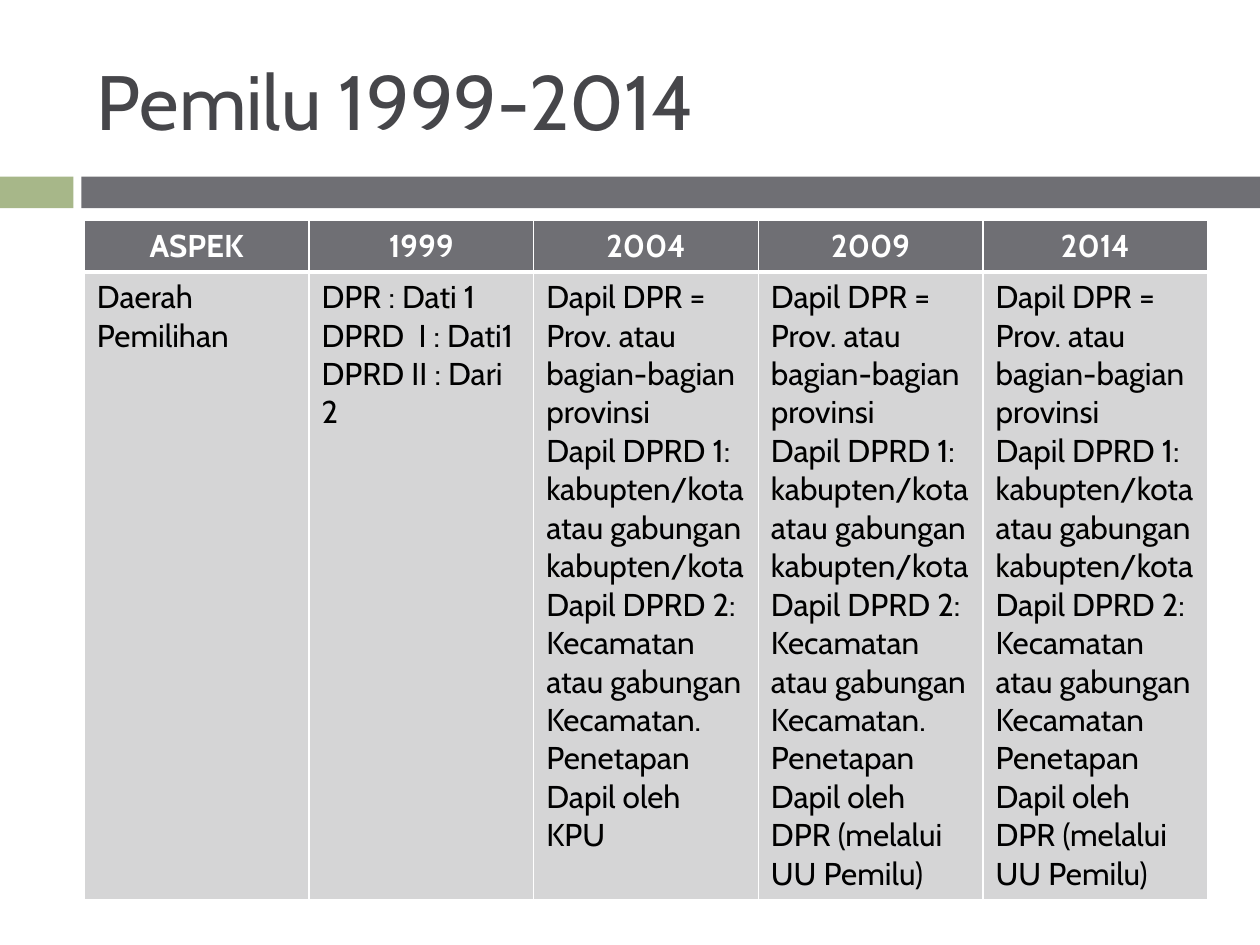
"""Build the slide comparing electoral districts in the 1999-2014 elections."""
from lxml import etree
from pptx import Presentation
from pptx.dml.color import RGBColor
from pptx.enum.shapes import MSO_SHAPE
from pptx.enum.text import MSO_ANCHOR, PP_ALIGN
from pptx.oxml.ns import qn
from pptx.util import Cm, Pt

RECTANGLE = MSO_SHAPE.RECTANGLE
MIDDLE = MSO_ANCHOR.MIDDLE
CENTER, LEFT = PP_ALIGN.CENTER, PP_ALIGN.LEFT

FONT = "Cabin"
COLORS = {
    "title": "46464A",
    "accent": "A7B789",
    "band": "6F6F74",
    "body": "D5D5D6",
    "white": "FFFFFF",
    "black": "000000",
}

TITLE = "Pemilu 1999-2014"
HEADERS = ["ASPEK", "1999", "2004", "2009", "2014"]
DISTRICTS = [
    "Dapil DPR = Prov. atau bagian-bagian provinsi",
    "Dapil DPRD 1: kabupten/kota atau gabungan kabupten/kota",
    "Dapil DPRD 2:",
]
SUBDISTRICTS = "Kecamatan atau gabungan Kecamatan"
SET_BY_DPR = "Penetapan Dapil oleh DPR (melalui UU Pemilu)"
DETAILS = [
    ["Daerah Pemilihan"],
    ["DPR : Dati 1", "DPRD  I : Dati1", "DPRD II : Dari 2"],
    DISTRICTS + [SUBDISTRICTS + ".", "Penetapan Dapil oleh KPU"],
    DISTRICTS + [SUBDISTRICTS + ".", SET_BY_DPR],
    DISTRICTS + [SUBDISTRICTS, SET_BY_DPR],
]

SLIDE_WIDTH, SLIDE_HEIGHT = 25.4, 19.05
BAND_TOP, BAND_HEIGHT = 3.56, 0.64
BANDS = [(0, 1.48, "accent"), (1.64, SLIDE_WIDTH - 1.64, "band")]
CONTENT_LEFT, CONTENT_WIDTH = 1.7, 22.65
TABLE_TOP = 4.45
ROW_HEIGHTS = [1.03, 12.65]
THIN, THICK = 1, 3


def rgb(name):
    return RGBColor.from_string(COLORS[name])


def write(frame, lines, size, color, bold=False, align=LEFT):
    frame.word_wrap = True
    for index, line in enumerate(lines):
        paragraph = frame.paragraphs[0] if index == 0 else frame.add_paragraph()
        paragraph.text = line
        paragraph.alignment = align
        font = paragraph.font
        font.name, font.size, font.bold = FONT, Pt(size), bold
        font.color.rgb = rgb(color)


def add_borders(cell, top, bottom):
    properties = cell._tc.get_or_add_tcPr()
    for side, width in (("L", THIN), ("R", THIN), ("T", top), ("B", bottom)):
        line = etree.SubElement(properties, qn(f"a:ln{side}"), w=str(Pt(width)))
        fill = etree.SubElement(line, qn("a:solidFill"))
        etree.SubElement(fill, qn("a:srgbClr"), val=COLORS["white"])


def fill_cell(cell, lines, background, top, bottom, **style):
    write(cell.text_frame, lines, 18, **style)
    add_borders(cell, top, bottom)
    cell.fill.solid()
    cell.fill.fore_color.rgb = rgb(background)


def add_bands(slide):
    for left, width, color in BANDS:
        band = slide.shapes.add_shape(
            RECTANGLE, Cm(left), Cm(BAND_TOP), Cm(width), Cm(BAND_HEIGHT))
        band.shadow.inherit = False
        band.fill.solid()
        band.fill.fore_color.rgb = rgb(color)
        band.line.fill.background()


def add_title(slide):
    title = slide.shapes.add_textbox(
        Cm(CONTENT_LEFT), Cm(0.64), Cm(CONTENT_WIDTH), Cm(2.74))
    title.text_frame.vertical_anchor = MIDDLE
    write(title.text_frame, [TITLE], 44, "title")


def add_comparison(slide):
    table = slide.shapes.add_table(
        len(ROW_HEIGHTS), len(HEADERS), Cm(CONTENT_LEFT), Cm(TABLE_TOP),
        Cm(CONTENT_WIDTH), Cm(sum(ROW_HEIGHTS))).table
    table.horz_banding = False
    for row, height in zip(table.rows, ROW_HEIGHTS):
        row.height = Cm(height)
    for index, (header, details) in enumerate(zip(HEADERS, DETAILS)):
        table.columns[index].width = Cm(CONTENT_WIDTH / len(HEADERS))
        fill_cell(table.cell(0, index), [header], "band", THIN, THICK,
                  color="white", bold=True, align=CENTER)
        fill_cell(table.cell(1, index), details, "body", THICK, THIN,
                  color="black")


def main():
    presentation = Presentation()
    presentation.slide_width = Cm(SLIDE_WIDTH)
    presentation.slide_height = Cm(SLIDE_HEIGHT)
    slide = presentation.slides.add_slide(presentation.slide_layouts[6])
    add_bands(slide)
    add_title(slide)
    add_comparison(slide)
    presentation.save("out.pptx")


if __name__ == "__main__":
    main()
